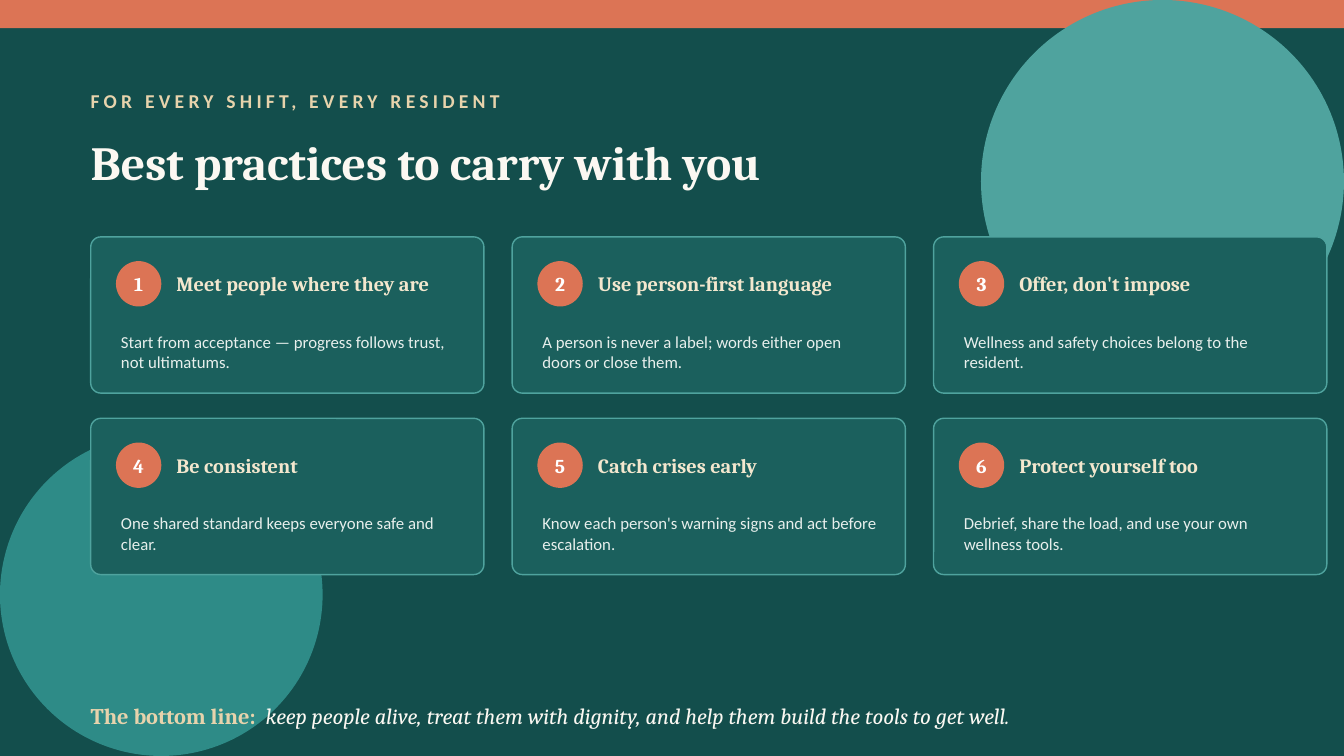
"""Build the best-practices slide: six numbered cards and a closing line."""
from dataclasses import dataclass

from pptx import Presentation
from pptx import util as u
from pptx.dml.color import RGBColor
from pptx.enum import shapes, text

DEEP_TEAL = RGBColor(0x13, 0x4E, 0x4C)
CARD_TEAL = RGBColor(0x1B, 0x60, 0x5D)
MID_TEAL = RGBColor(0x2E, 0x8B, 0x87)
LIGHT_TEAL = RGBColor(0x4F, 0xA3, 0x9E)
CORAL = RGBColor(0xDC, 0x74, 0x55)
SAND = RGBColor(0xE7, 0xD3, 0xAC)
CREAM = RGBColor(0xF3, 0xE7, 0xCE)
IVORY = RGBColor(0xFB, 0xF8, 0xF2)
MIST = RGBColor(0xE7, 0xEF, 0xEC)
WHITE = RGBColor(0xFF, 0xFF, 0xFF)

COLUMNS = 3
GRID_LEFT, GRID_TOP = 0.9, 2.35
COLUMN_STEP, ROW_STEP = 4.18, 1.8


@dataclass(frozen=True)
class Box:
    """Position and size in inches."""
    left: float
    top: float
    width: float
    height: float

    def lengths(self) -> list[u.Length]:
        """Return the four values as lengths."""
        return [u.Inches(value) for value in (self.left, self.top, self.width, self.height)]


@dataclass(frozen=True)
class Style:
    """Font settings of a run."""
    name: str
    size: float
    color: RGBColor
    bold: bool = False
    italic: bool = False
    tracking: float = 0


@dataclass(frozen=True)
class Practice:
    """Heading and explanation of one card."""
    heading: str
    detail: str


EYEBROW = Style("Calibri", 14, SAND, bold=True, tracking=3)
TITLE = Style("Cambria", 34, IVORY, bold=True)
NUMBER = Style("Cambria", 14, WHITE, bold=True)
HEADING = Style("Cambria", 14.5, CREAM, bold=True)
DETAIL = Style("Calibri", 12, MIST)
CLOSING_LABEL = Style("Cambria", 16, SAND, bold=True)
CLOSING = Style("Cambria", 16, IVORY, italic=True)

PRACTICES = [
    Practice("Meet people where they are",
             "Start from acceptance — progress follows trust, not ultimatums."),
    Practice("Use person-first language",
             "A person is never a label; words either open doors or close them."),
    Practice("Offer, don't impose",
             "Wellness and safety choices belong to the resident."),
    Practice("Be consistent",
             "One shared standard keeps everyone safe and clear."),
    Practice("Catch crises early",
             "Know each person's warning signs and act before escalation."),
    Practice("Protect yourself too",
             "Debrief, share the load, and use your own wellness tools."),
]


def write(shape, runs: list[tuple[str, Style]], spacing: float = 1.0,
          alignment=text.PP_ALIGN.LEFT) -> None:
    """Fill a shape with one paragraph of styled runs."""
    frame_format = {
        "word_wrap": True,
        "auto_size": text.MSO_AUTO_SIZE.NONE,
        "vertical_anchor": text.MSO_ANCHOR.MIDDLE,
        "margin_left": 0, "margin_top": 0, "margin_right": 0, "margin_bottom": 0,
    }
    for attribute, value in frame_format.items():
        setattr(shape.text_frame, attribute, value)
    paragraph = shape.text_frame.paragraphs[0]
    paragraph.alignment = alignment
    paragraph.line_spacing = spacing
    for words, style in runs:
        run = paragraph.add_run()
        run.text = words
        font_format = {"name": style.name, "size": u.Pt(style.size),
                       "bold": style.bold, "italic": style.italic}
        for attribute, value in font_format.items():
            setattr(run.font, attribute, value)
        run.font.color.rgb = style.color
        if style.tracking:
            run._r.get_or_add_rPr().set("spc", str(int(style.tracking * 100)))


def add_text(slide, box: Box, runs: list[tuple[str, Style]], spacing: float = 1.0) -> None:
    """Add a text box."""
    write(slide.shapes.add_textbox(*box.lengths()), runs, spacing)


def add_panel(slide, kind, box: Box, fill: RGBColor, line: RGBColor | None = None):
    """Add a flat preset shape and return it."""
    shape = slide.shapes.add_shape(kind, *box.lengths())
    shape.shadow.inherit = False
    shape.fill.solid()
    shape.fill.fore_color.rgb = fill
    if line is None:
        shape.line.fill.background()
    else:
        shape.line.color.rgb = line
        shape.line.width = u.Pt(1)
    return shape


def add_card(slide, index: int, practice: Practice) -> None:
    """Add one numbered card at its place in the grid."""
    row, column = divmod(index, COLUMNS)
    left = GRID_LEFT + column * COLUMN_STEP
    top = GRID_TOP + row * ROW_STEP
    card = add_panel(slide, shapes.MSO_SHAPE.ROUNDED_RECTANGLE,
                     Box(left, top, 3.9, 1.55), CARD_TEAL, LIGHT_TEAL)
    card.adjustments[0] = 0.065
    badge = add_panel(slide, shapes.MSO_SHAPE.OVAL,
                      Box(left + 0.25, top + 0.24, 0.45, 0.45), CORAL)
    write(badge, [(str(index + 1), NUMBER)], alignment=text.PP_ALIGN.CENTER)
    add_text(slide, Box(left + 0.85, top + 0.2, 2.85, 0.55),
             [(practice.heading, HEADING)], 0.95)
    add_text(slide, Box(left + 0.3, top + 0.8, 3.35, 0.68),
             [(practice.detail, DETAIL)], 1.02)


def main() -> None:
    """Build and save the presentation."""
    presentation = Presentation()
    presentation.slide_width = u.Inches(13.33)
    presentation.slide_height = u.Inches(7.5)
    slide = presentation.slides.add_slide(presentation.slide_layouts[5])
    slide.background.fill.solid()
    slide.background.fill.fore_color.rgb = DEEP_TEAL

    add_panel(slide, shapes.MSO_SHAPE.RECTANGLE, Box(0, 0, 13.33, 0.28), CORAL)
    add_panel(slide, shapes.MSO_SHAPE.OVAL, Box(0, 4.3, 3.2, 3.2), MID_TEAL)
    add_panel(slide, shapes.MSO_SHAPE.OVAL, Box(9.73, 0, 3.6, 3.6), LIGHT_TEAL)

    add_text(slide, Box(0.9, 0.75, 11.5, 0.5),
             [("FOR EVERY SHIFT, EVERY RESIDENT", EYEBROW)])
    title = slide.shapes.title
    title.left, title.top, title.width, title.height = Box(0.9, 1.15, 11.5, 0.9).lengths()
    write(title, [("Best practices to carry with you", TITLE)])

    for index, practice in enumerate(PRACTICES):
        add_card(slide, index, practice)

    add_text(slide, Box(0.9, 6.85, 11.5, 0.5), [
        ("The bottom line:  ", CLOSING_LABEL),
        ("keep people alive, treat them with dignity, "
         "and help them build the tools to get well.", CLOSING),
    ])
    presentation.save("out.pptx")


if __name__ == "__main__":
    main()
